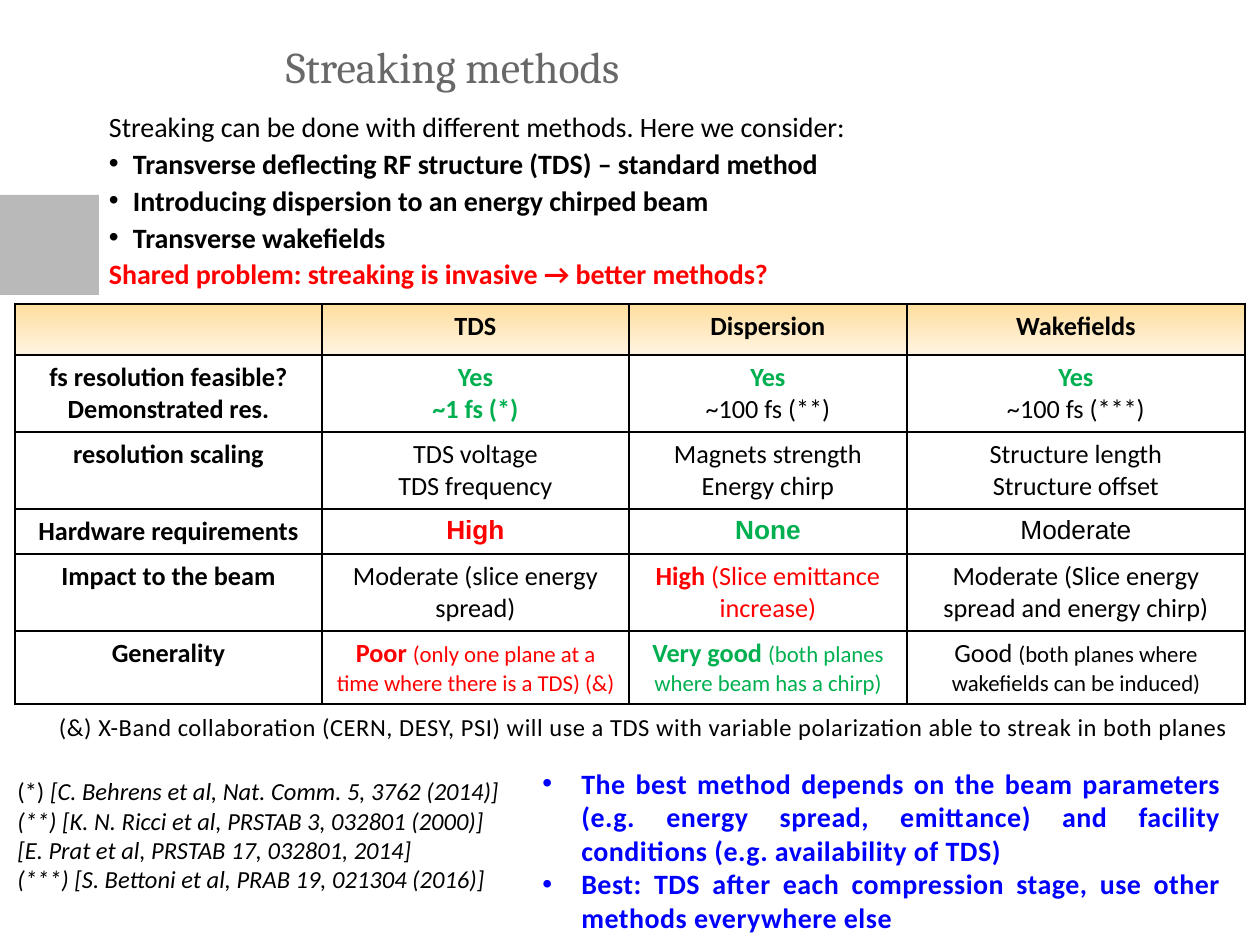
from lxml.etree import SubElement
from pptx import Presentation
from pptx.dml.color import RGBColor
from pptx.enum.shapes import MSO_SHAPE
from pptx.enum.text import MSO_ANCHOR, MSO_AUTO_SIZE, PP_ALIGN
from pptx.oxml import parse_xml
from pptx.oxml.ns import nsdecls, qn
from pptx.util import Emu, Pt

PX_PER_INCH = 126
BLACK, RED, GREEN, BLUE = "000000", "FF0000", "00B050", "0000FF"
GOOD = {"color": GREEN, "bold": True}
BAD = {"color": RED, "bold": True}
STRONG = {"bold": True}


def px(length):
    return Emu(round(length * 914400 / PX_PER_INCH))


def rgb(value):
    return RGBColor.from_string(value)


def place(shape, box):
    shape.left, shape.top, shape.width, shape.height = map(px, box)


def style_run(run, size=15, font="Calibri", color=BLACK, bold=False,
              italic=False, spacing=0):
    run.font.size = Pt(size)
    run.font.name = font
    run.font.color.rgb = rgb(color)
    run.font.bold = bold
    run.font.italic = italic
    if spacing:
        run.font._element.set("spc", str(spacing))


def set_bullet(paragraph, indent):
    """Give a bullet with a hanging indent, or none when indent is 0."""
    properties = paragraph._p.get_or_add_pPr()
    properties.set("marL", str(px(indent)))
    properties.set("indent", str(-px(indent)))
    if indent:
        SubElement(properties, qn("a:buFont"), typeface="Arial")
        SubElement(properties, qn("a:buChar"), char="•")
    else:
        SubElement(properties, qn("a:buNone"))


def write(frame, paragraphs, align=PP_ALIGN.LEFT, line_spacing=None, **base):
    """Each paragraph is a list of (text, style) runs; style overrides base."""
    frame.text = "\n".join(runs[0][0] for runs in paragraphs)
    for paragraph, runs in zip(frame.paragraphs, paragraphs):
        paragraph.alignment = align
        paragraph.space_before = Pt(0)
        if line_spacing:
            paragraph.line_spacing = line_spacing
        for text, _ in runs[1:]:
            paragraph.add_run().text = text
        for run, (_, style) in zip(paragraph.runs, runs):
            style_run(run, **{**base, **style})


def set_frame(frame, margin=None):
    frame.word_wrap = True
    frame.auto_size = MSO_AUTO_SIZE.NONE
    frame.vertical_anchor = MSO_ANCHOR.TOP
    if margin is not None:
        frame.margin_left = frame.margin_right = px(margin)
        frame.margin_top = frame.margin_bottom = px(margin)


def add_side_block(slide, box):
    block = slide.shapes.add_shape(MSO_SHAPE.RECTANGLE, *map(px, box))
    block.shadow.inherit = False
    block.fill.solid()
    block.fill.fore_color.rgb = rgb("B9B9B9")
    block.line.fill.background()


def fill_title(slide, box):
    title = slide.shapes.title
    place(title, box)
    set_frame(title.text_frame, 0)
    write(title.text_frame, [[("Streaking methods", {})]],
          size=25, font="Cambria", color="686868")


def fill_methods(slide, box):
    methods = slide.placeholders[1]
    place(methods, box)
    set_frame(methods.text_frame, 0)
    write(methods.text_frame, [
        [("Streaking can be done with different methods. Here we consider:", {})],
        [("Transverse deflecting RF structure (TDS) – standard method", STRONG)],
        [("Introducing dispersion to an energy chirped beam", STRONG)],
        [("Transverse wakefields", STRONG)],
        [("Shared problem: streaking is invasive → better methods?", BAD)],
    ], line_spacing=1.1, size=16)
    for paragraph, indent in zip(methods.text_frame.paragraphs, (0, 24, 24, 24, 0)):
        set_bullet(paragraph, indent)


def lines(*texts, **style):
    return [[(text, style)] for text in texts]


def rating(verdict, remark, color, remark_size=13):
    return [[(verdict, {"color": color, "bold": color != BLACK}),
             (remark, {"color": color, "size": remark_size})]]


COMPARISON = [
    [lines(text, **STRONG) for text in ("", "TDS", "Dispersion", "Wakefields")],
    [lines("fs resolution feasible?", "Demonstrated res.", **STRONG),
     lines("Yes", "~1 fs (*)", **GOOD),
     lines("Yes", **GOOD) + lines("~100 fs (**)"),
     lines("Yes", **GOOD) + lines("~100 fs (***)")],
    [lines("resolution scaling", **STRONG),
     lines("TDS voltage", "TDS frequency"),
     lines("Magnets strength", "Energy chirp"),
     lines("Structure length", "Structure offset")],
    [lines("Hardware requirements", **STRONG),
     lines("High", font="Arial", **BAD),
     lines("None", font="Arial", **GOOD),
     lines("Moderate", font="Arial")],
    [lines("Impact to the beam", **STRONG),
     lines("Moderate (slice energy spread)"),
     rating("High ", "(Slice emittance increase)", RED, 15),
     lines("Moderate (Slice energy spread and energy chirp)")],
    [lines("Generality", **STRONG),
     rating("Poor ", "(only one plane at a time where there is a TDS) (&)", RED),
     rating("Very good ", "(both planes where beam has a chirp)", GREEN),
     rating("Good ", "(both planes where wakefields can be induced)", BLACK)],
]


def set_borders(cell):
    properties = cell._tc.get_or_add_tcPr()
    for index, side in enumerate(("lnL", "lnR", "lnT", "lnB")):
        properties.insert(index, parse_xml(
            f'<a:{side} {nsdecls("a")} w="12700"><a:solidFill>'
            f'<a:srgbClr val="{BLACK}"/></a:solidFill></a:{side}>'))


def fill_header(cell):
    cell.fill.gradient()
    cell.fill.gradient_angle = 270
    for stop, color in zip(cell.fill.gradient_stops, ("FFDE9E", "FFF4E2")):
        stop.color.rgb = rgb(color)


def add_comparison(slide, left, top, widths, heights):
    box = (left, top, sum(widths), sum(heights))
    table = slide.shapes.add_table(len(heights), len(widths), *map(px, box)).table
    for column, width in zip(table.columns, widths):
        column.width = px(width)
    for row, height in zip(table.rows, heights):
        row.height = px(height)
    for r, contents in enumerate(COMPARISON):
        for c, paragraphs in enumerate(contents):
            cell = table.cell(r, c)
            write(cell.text_frame, paragraphs, align=PP_ALIGN.CENTER)
            if r == 0:
                fill_header(cell)
            else:
                cell.fill.background()
            set_borders(cell)


def add_text(slide, box, paragraphs, margin=None, indent=0, **style):
    frame = slide.shapes.add_textbox(*map(px, box)).text_frame
    set_frame(frame, margin)
    write(frame, paragraphs, **style)
    if indent:
        for paragraph in frame.paragraphs:
            set_bullet(paragraph, indent)


def main():
    presentation = Presentation()
    presentation.slide_width, presentation.slide_height = px(1260), px(945)
    slide = presentation.slides.add_slide(presentation.slide_layouts[1])

    # Heading and list of methods
    add_side_block(slide, (0, 195, 99, 100))
    fill_title(slide, (286, 40, 925, 71))
    fill_methods(slide, (109, 106, 1151, 466))

    # Comparison of the three methods
    add_comparison(slide, 15, 304, (307, 307, 278, 338), (44, 77, 77, 45, 77, 73))

    # Conclusions, footnote and references
    add_text(slide, (530, 760, 704, 183), lines(
        "The best method depends on the beam parameters (e.g. energy spread, "
        "emittance) and facility conditions (e.g. availability of TDS)",
        "Best: TDS after each compression stage, use other methods everywhere else",
    ), indent=39, align=PP_ALIGN.JUSTIFY, size=16, color=BLUE, bold=True, spacing=30)
    add_text(slide, (59, 709, 1201, 32), lines(
        "(&) X-Band collaboration (CERN, DESY, PSI) will use a TDS with variable "
        "polarization able to streak in both planes",
    ), margin=0, line_spacing=1.1, size=14, spacing=30)
    add_text(slide, (5, 770, 517, 161), [
        [("(*)", {"italic": False}),
         (" [C. Behrens et al, Nat. Comm. 5, 3762 (2014)]", {})],
        *lines("(**) [K. N. Ricci et al, PRSTAB 3, 032801 (2000)]",
               "[E. Prat et al, PRSTAB 17, 032801, 2014]",
               "(***) [S. Bettoni et al, PRAB 19, 021304 (2016)]"),
    ], align=PP_ALIGN.JUSTIFY, size=14, italic=True)

    presentation.save("out.pptx")


if __name__ == "__main__":
    main()
